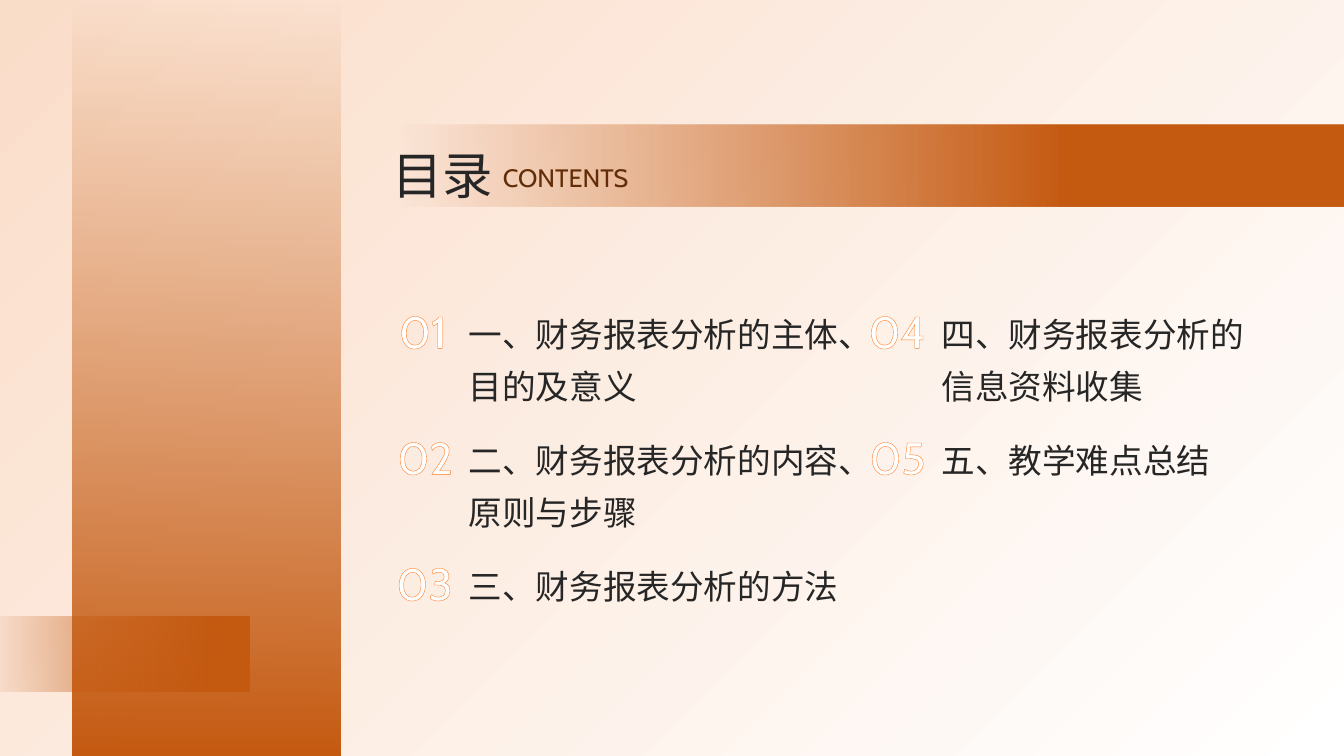
import pptx
import pptx.dml.color
import pptx.enum.shapes
import pptx.enum.text
import pptx.oxml
import pptx.oxml.ns
import pptx.util
from pptx.util import Inches

TITLE, SUBTITLE = "目录", "CONTENTS"

# Each column: left of numbers, left of entries, entry width, then
# (number, width of number box, entry) from top to bottom.
COLUMNS = [
    (3.39, 4.55, 3.9, [
        ("01", 1.14, "一、财务报表分析的主体、目的及意义"),
        ("02", 1.2, "二、财务报表分析的内容、原则与步骤"),
        ("03", 1.2, "三、财务报表分析的方法"),
    ]),
    (8.08, 9.24, 3.37, [
        ("04", 1.2, "四、财务报表分析的信息资料收集"),
        ("05", 1.2, "五、教学难点总结"),
    ]),
]
FIRST_ROW, ROW_PITCH, ENTRY_DROP = 2.91, 1.25, 0.03

THEME = {
    "font": "Cabin",
    "white": "FFFFFF", "peach": "FADDC9", "rust": "C55A11",
    "ink": "262626", "brown": "622D08", "orange": "FF7619",
    "title": 36, "subtitle": 18, "number": 32, "entry": 24,
}

# Box, gradient stops (position %, colour, opacity %), clockwise angle
BANDS = [
    ((0, 0, 13.33, 7.5), [(0, "white", 100), (100, "peach", 100)], 225),
    ((0.72, 0, 2.66, 7.5), [(0, "rust", 0), (100, "rust", 100)], 90),
    ((3.97, 1.24, 9.36, 0.81), [(29, "rust", 100), (100, "rust", 0)], 180),
    ((-0.18, 6.12, 2.66, 0.74), [(9, "rust", 100), (100, "rust", 0)], 180),
]


def add_band(slide, box, stops, angle):
    band = slide.shapes.add_shape(
        pptx.enum.shapes.MSO_SHAPE.RECTANGLE, *map(Inches, box))
    band.shadow.inherit = False
    band.line.fill.background()
    stop_xml = "".join(
        f'<a:gs pos="{position * 1000}"><a:srgbClr val="{THEME[colour]}">'
        f'<a:alpha val="{opacity * 1000}"/></a:srgbClr></a:gs>'
        for position, colour, opacity in stops)
    gradient = pptx.oxml.parse_xml(
        f'<a:gradFill {pptx.oxml.ns.nsdecls("a")} rotWithShape="1">'
        f'<a:gsLst>{stop_xml}</a:gsLst>'
        f'<a:lin ang="{angle * 60000}" scaled="0"/></a:gradFill>')
    geometry = band._element.spPr.find(pptx.oxml.ns.qn("a:prstGeom"))
    geometry.addnext(gradient)


def add_label(slide, box, text, size, colour, spacing=1.1, outline=None,
              align=pptx.enum.text.PP_ALIGN.LEFT):
    frame = slide.shapes.add_textbox(*map(Inches, box)).text_frame
    frame.word_wrap = True
    frame.text = text
    paragraph = frame.paragraphs[0]
    paragraph.alignment = align
    paragraph.line_spacing = spacing
    run = paragraph.runs[0]
    run.font.size = pptx.util.Pt(THEME[size])
    run.font.name = THEME["font"]
    run.font.color.rgb = pptx.dml.color.RGBColor.from_string(THEME[colour])
    properties = run._r.get_or_add_rPr()
    latin = properties.find(pptx.oxml.ns.qn("a:latin"))
    latin.addnext(pptx.oxml.parse_xml(
        f'<a:ea {pptx.oxml.ns.nsdecls("a")} typeface="{THEME["font"]}"/>'))
    if outline:
        properties.insert(0, pptx.oxml.parse_xml(
            f'<a:ln {pptx.oxml.ns.nsdecls("a")} w="12700"><a:solidFill>'
            f'<a:srgbClr val="{THEME[outline]}"/></a:solidFill></a:ln>'))


def main():
    deck = pptx.Presentation()
    deck.slide_width, deck.slide_height = Inches(13.33), Inches(7.5)
    slide = deck.slides.add_slide(deck.slide_layouts[6])

    for box, stops, angle in BANDS:
        add_band(slide, box, stops, angle)

    add_label(slide, (3.79, 1.32, 6.31, 0.71), TITLE, "title", "ink")
    add_label(slide, (4.89, 1.53, 5.2, 0.33), SUBTITLE, "subtitle", "brown")

    for number_left, entry_left, entry_width, entries in COLUMNS:
        for row, (number, number_width, entry) in enumerate(entries):
            top = FIRST_ROW + row * ROW_PITCH
            add_label(slide, (number_left, top, number_width, 0.77), number,
                      "number", "white", outline="orange",
                      align=pptx.enum.text.PP_ALIGN.RIGHT)
            add_label(slide, (entry_left, top + ENTRY_DROP, entry_width, 1.11),
                      entry, "entry", "ink", spacing=1.3)

    deck.save("out.pptx")


if __name__ == "__main__":
    main()
